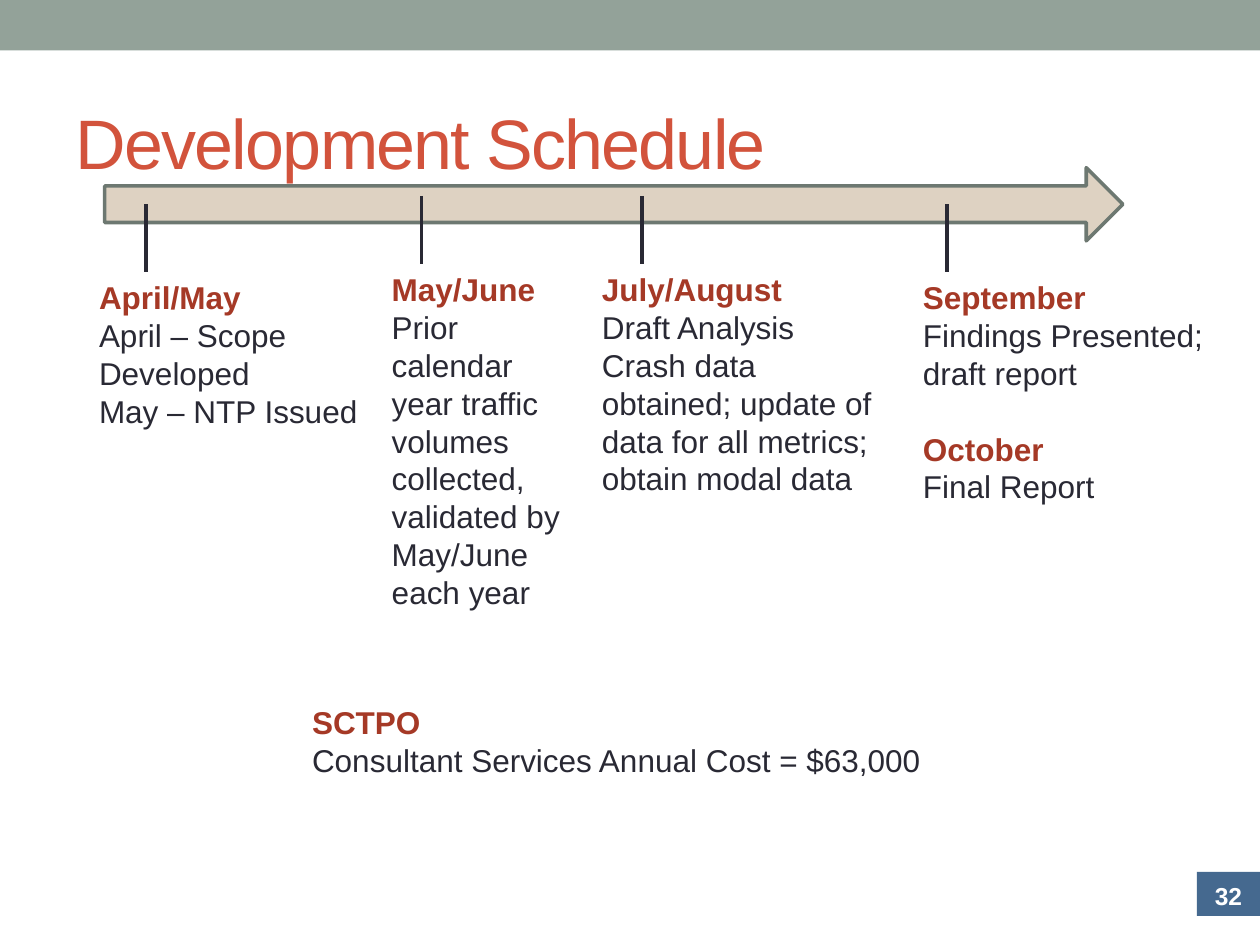
from pptx import Presentation
from pptx.enum import shapes, text
from pptx.dml.color import RGBColor
from pptx.oxml.ns import qn
from pptx.util import Pt
from lxml import etree

COLORS = {"band": "93A299", "title": "D2533C", "arrow": "DED2C2", "edge": "6D7871",
          "dark": "292934", "heading": "A53926", "badge": "45698F", "white": "FFFFFF"}
LINE = 21.6

prs = Presentation()
prs.slide_width, prs.slide_height = Pt(720), Pt(540)
s = prs.slides.add_slide(prs.slide_layouts[5])


def add_block(kind, x, y, w, h, fill, line=None):
    sp = s.shapes.add_shape(kind, Pt(x), Pt(y), Pt(w), Pt(h))
    sp.shadow.inherit = False
    sp.fill.solid()
    sp.fill.fore_color.rgb = RGBColor.from_string(COLORS[fill])
    if line:
        sp.line.color.rgb = RGBColor.from_string(COLORS[line])
        sp.line.width = Pt(2.08)
    else:
        sp.line.fill.background()
    return sp


def add_note(x, y, w, h, lines):
    """Text box from (style, wording) pairs; headings after the first get a line of space."""
    tf = s.shapes.add_textbox(Pt(x), Pt(y), Pt(w), Pt(h)).text_frame
    tf.word_wrap = True
    for i, (style, wording) in enumerate(lines):
        p = tf.add_paragraph() if i else tf.paragraphs[0]
        p.text = wording
        p.line_spacing = Pt(LINE)
        p.space_before = Pt(LINE if i and style == "heading" else 0)
        p.font.name, p.font.size = "Arial", Pt(18)
        p.font.bold = style == "heading"
        p.font.color.rgb = RGBColor.from_string(COLORS[style])


# Top band
add_block(shapes.MSO_SHAPE.RECTANGLE, 0, 0, 720, 28.8, "band")

# Title
title = s.shapes.title
title.left, title.top, title.width, title.height = Pt(36), Pt(41.8), Pt(648), Pt(77.8)
tf = title.text_frame
tf.text = "Development Schedule"
tf.vertical_anchor = text.MSO_ANCHOR.MIDDLE
p = tf.paragraphs[0]
p.alignment = text.PP_ALIGN.LEFT
r = p.runs[0]
r.font.name, r.font.size = "Arial", Pt(40)
r.font.color.rgb = RGBColor.from_string(COLORS["title"])
r.font._element.set("spc", "-100")

# Timeline arrow
add_block(shapes.MSO_SHAPE.RIGHT_ARROW, 59.8, 95.8, 581.8, 41.8, "arrow", "edge")

# Milestones: tick x, tick top, text left, width, height, lines
milestones = [
    (83.4, 116.6, 49.5, 174.2, 116.6, [
        ("heading", "April/May"), ("dark", "April – Scope Developed"),
        ("dark", "May – NTP Issued")]),
    (241, 112, 216.8, 120.2, 203.8, [
        ("heading", "May/June"),
        ("dark", "Prior calendar year traffic volumes collected, validated by May/June each year")]),
    (367, 112, 336.8, 174.2, 159.8, [
        ("heading", "July/August"), ("dark", "Draft Analysis"),
        ("dark", "Crash data obtained; update of data for all metrics; obtain modal data")]),
    (541.2, 116.6, 520.3, 181.4, 181.4, [
        ("heading", "September"), ("dark", "Findings Presented; draft report"),
        ("heading", "October"), ("dark", "Final Report")]),
]
for tick_x, tick_y, x, w, h, lines in milestones:
    text_y = tick_y + 39
    tick = s.shapes.add_connector(shapes.MSO_CONNECTOR.STRAIGHT,
                                  Pt(tick_x), Pt(tick_y), Pt(tick_x), Pt(text_y))
    tick.line.color.rgb = RGBColor.from_string(COLORS["dark"])
    tick.line.width = Pt(2)
    etree.SubElement(tick._element.spPr, qn("a:effectLst"))
    add_note(x, text_y, w, h, lines)

# Cost
add_note(171.2, 398.2, 455, 51.1, [
    ("heading", "SCTPO"), ("dark", "Consultant Services Annual Cost = $63,000")])

# Page number
badge = add_block(shapes.MSO_SHAPE.RECTANGLE, 684, 498.2, 36, 25.2, "badge")
tf = badge.text_frame
tf.text = "32"
tf.margin_left = tf.margin_right = 0
tf.margin_top, tf.margin_bottom = Pt(4.8), Pt(2.4)
tf.vertical_anchor = text.MSO_ANCHOR.MIDDLE
p = tf.paragraphs[0]
p.alignment = text.PP_ALIGN.CENTER
p.font.name, p.font.size, p.font.bold = "Arial", Pt(14), True
p.font.color.rgb = RGBColor.from_string(COLORS["white"])

prs.save("out.pptx")
